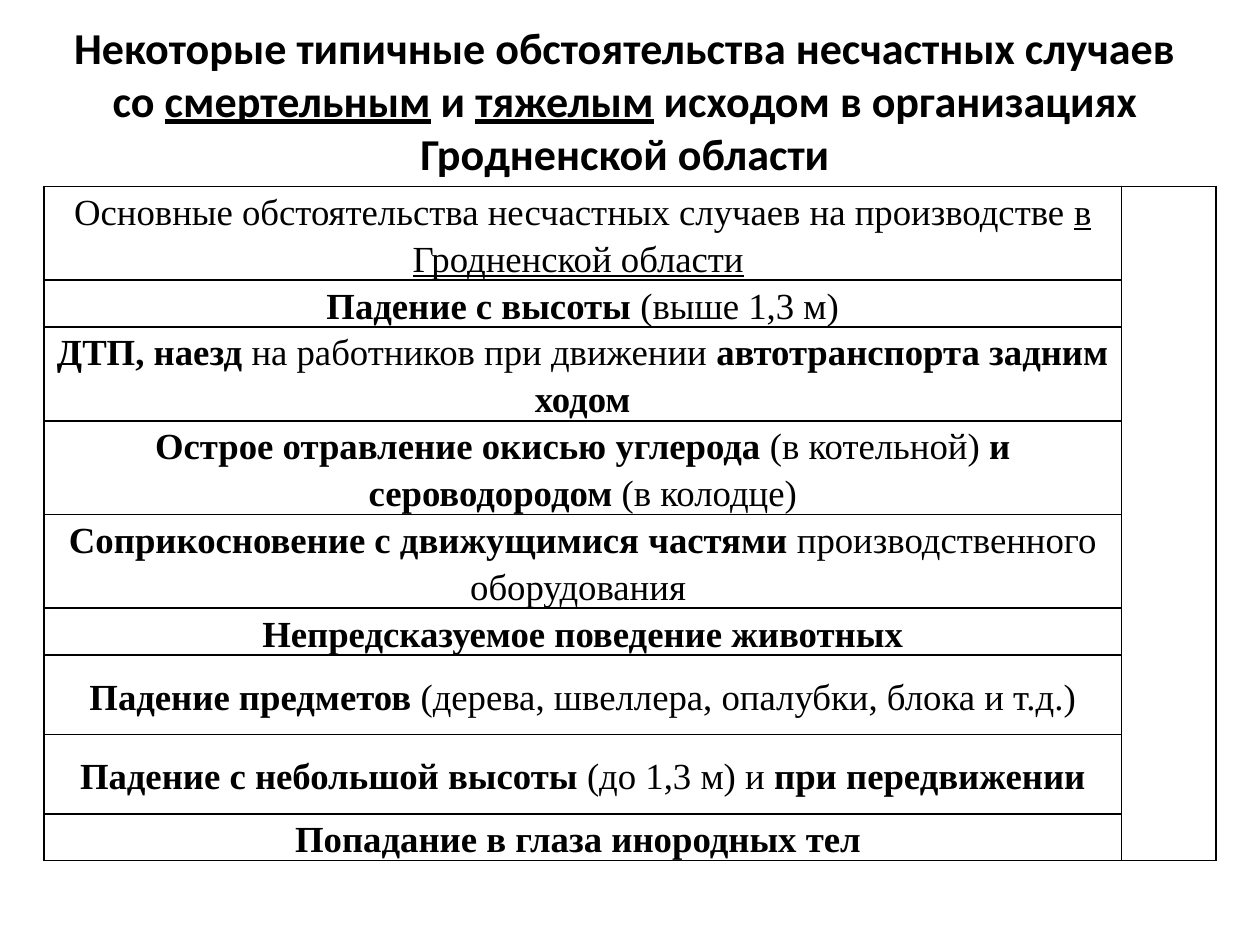
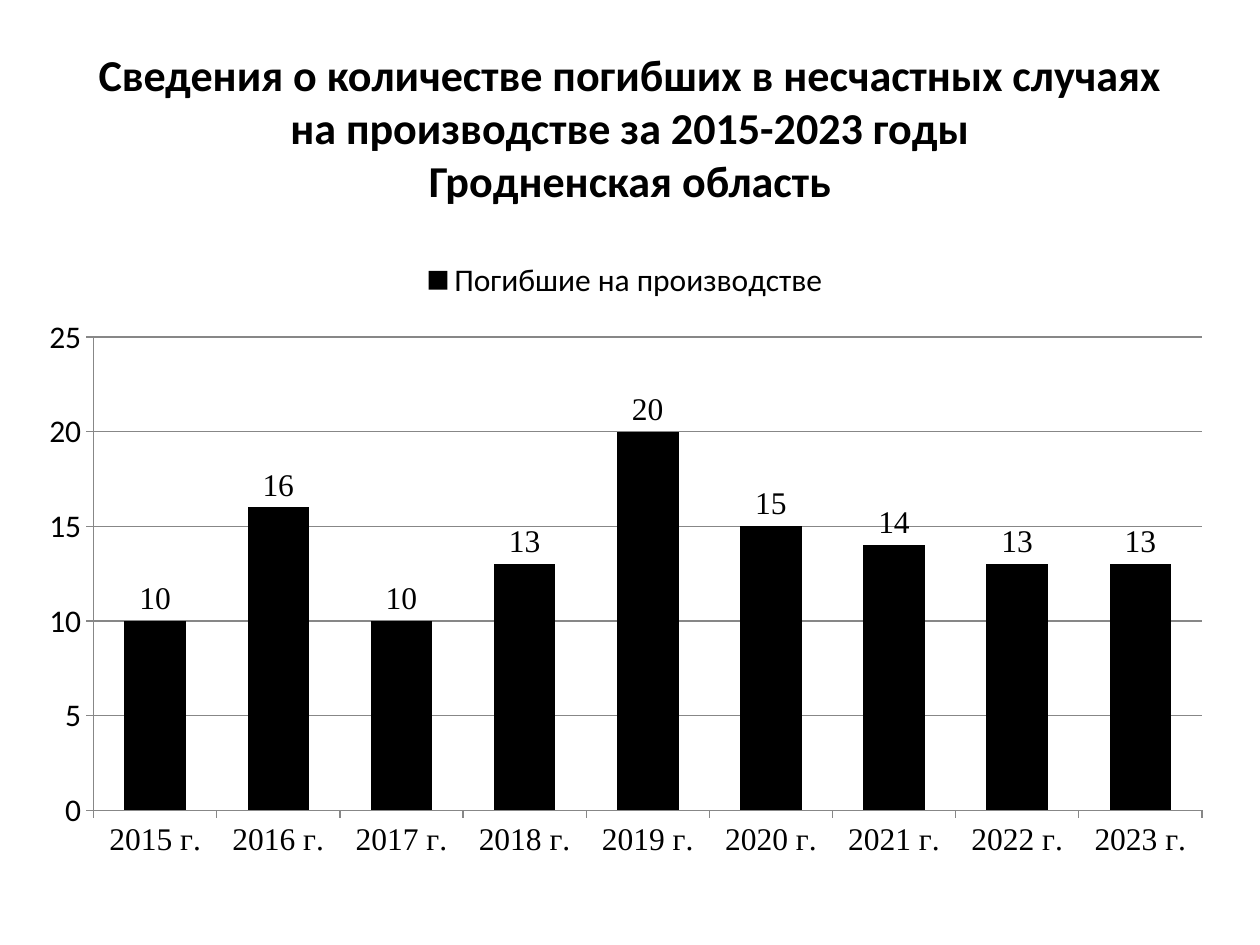
import pptx
import pptx.chart.data
import pptx.dml.color
import pptx.enum.chart
import pptx.enum.text
import pptx.oxml
import pptx.oxml.ns
import pptx.util
from dataclasses import dataclass

Inches, Pt = pptx.util.Inches, pptx.util.Pt
RGB = pptx.dml.color.RGBColor.from_string


@dataclass(frozen=True)
class Theme:
    ink: str = "000000"
    grid: str = "878787"
    paper: str = "FFFFFF"
    sans: str = "Calibri"
    serif: str = "Times New Roman"
    title_size: float = 25.2
    table_size: float = 21
    chart_size: float = 18
    border: float = 1


THEME = Theme()

CAUSES = {
    "title": "Некоторые типичные обстоятельства несчастных случаев со *смертельным* и "
             "*тяжелым* исходом в организациях Гродненской области",
    "title_at": (0.31, 0.31, 9.3, 1.33),
    "table_at": (0.35, 1.48, 9.3, 5.69),
    "columns": (8.55, 0.75),
    "header": "Основные обстоятельства несчастных случаев на производстве *в Гродненской области* ",
    "header_height": 0.69,
    "rows": [
        ("*Падение с высоты* (выше 1,3 м)", 0.32),
        ("*ДТП, наезд *на работников при движении* автотранспорта задним ходом*", 0.63),
        ("*Острое отравление окисью углерода *(в котельной)* и сероводородом *(в колодце)", 0.63),
        ("*Соприкосновение с движущимися частями* производственного оборудования ", 0.63),
        ("*Непредсказуемое поведение животных*", 0.32),
        ("*Падение предметов *(дерева, швеллера, опалубки, блока и т.д.)", 0.63),
        ("*Падение с небольшой высоты* (до 1,3 м) и *при передвижении*", 0.63),
        ("*Попадание в глаза инородных тел *", 0.32),
    ],
}

DEATHS = {
    "title": "Сведения о количестве погибших в несчастных случаях на производстве "
             "за 2015-2023 годы\nГродненская область",
    "title_at": (0.5, 0.3, 9, 1.42),
    "chart_at": (0.2, 1.95, 9.53, 4.95),
    "series": "Погибшие на производстве",
    "first_year": 2015,
    "values": (10, 16, 10, 13, 20, 15, 14, 13, 13),
}


def style_font(font, face, size):
    font.name, font.size = face, Pt(size)
    font.color.rgb = RGB(THEME.ink)


def write(tf, text, face, size, bold=False, emphasis="bold", spacing=None, before=None):
    p = tf.paragraphs[0]
    p.alignment = pptx.enum.text.PP_ALIGN.CENTER
    if spacing:
        p.line_spacing = spacing
    if before:
        p.space_before = Pt(before)
    for i, part in enumerate(text.split("*")):
        for j, line in enumerate(part.split("\n")):
            if j:
                p.add_line_break()
            if line:
                r = p.add_run()
                r.text = line
                style_font(r.font, face, size)
                r.font.bold = bold
                if i % 2:
                    setattr(r.font, emphasis, True)


def add_titled_slide(prs, content, bottom_inset=0.05):
    slide = prs.slides.add_slide(prs.slide_layouts[5])
    slide.background.fill.solid()
    slide.background.fill.fore_color.rgb = RGB(THEME.paper)
    sp = slide.shapes.title
    sp.left, sp.top, sp.width, sp.height = map(Inches, content["title_at"])
    tf = sp.text_frame
    tf.word_wrap = True
    tf.auto_size = pptx.enum.text.MSO_AUTO_SIZE.NONE
    tf.vertical_anchor = pptx.enum.text.MSO_ANCHOR.MIDDLE
    tf.margin_bottom = Inches(bottom_inset)
    write(tf, content["title"], THEME.sans, THEME.title_size, bold=True, emphasis="underline")
    return slide


def format_cell(cell):
    cell.margin_left = cell.margin_right = Inches(0.07)
    cell.margin_top = cell.margin_bottom = 0
    tcPr = cell._tc.get_or_add_tcPr()
    for side in ("lnL", "lnR", "lnT", "lnB"):
        tcPr.append(pptx.oxml.parse_xml(
            f'<a:{side} {pptx.oxml.ns.nsdecls("a")} w="{Pt(THEME.border)}"><a:solidFill>'
            f'<a:srgbClr val="{THEME.ink}"/></a:solidFill></a:{side}>'))
    cell.fill.background()


def add_causes_table(slide, content):
    rows = [(content["header"], content["header_height"])] + content["rows"]
    frame = slide.shapes.add_table(len(rows), len(content["columns"]),
                                   *map(Inches, content["table_at"]))
    table = frame.table
    table.first_row = table.horz_banding = False
    for column, width in zip(table.columns, content["columns"]):
        column.width = Inches(width)
    for cell in table.iter_cells():
        format_cell(cell)
    for i, (text, height) in enumerate(rows):
        table.rows[i].height = Inches(height)
        cell = table.cell(i, 0)
        if i:
            cell.vertical_anchor = pptx.enum.text.MSO_ANCHOR.MIDDLE
        write(cell.text_frame, text, THEME.serif, THEME.table_size, spacing=1.15,
              emphasis="bold" if i else "underline", before=3 if i else None)
    table.cell(0, 1).merge(table.cell(len(rows) - 1, 1))


def add_deaths_chart(slide, content):
    data = pptx.chart.data.CategoryChartData()
    data.categories = [f"{content['first_year'] + i} г." for i in range(len(content["values"]))]
    data.add_series(content["series"], content["values"])
    chart = slide.shapes.add_chart(pptx.enum.chart.XL_CHART_TYPE.COLUMN_CLUSTERED,
                                   *map(Inches, content["chart_at"]), data).chart
    style_font(chart.font, THEME.sans, THEME.chart_size)
    chart.has_title = False
    chart.has_legend = True
    chart.legend.position = pptx.enum.chart.XL_LEGEND_POSITION.TOP
    chart.legend.include_in_layout = False

    years, deaths = chart.category_axis, chart.value_axis
    style_font(years.tick_labels.font, THEME.serif, THEME.chart_size)
    deaths.minimum_scale, deaths.maximum_scale, deaths.major_unit = 0, 25, 5
    deaths.has_major_gridlines = True
    for axis in (years, deaths):
        axis.major_tick_mark = pptx.enum.chart.XL_TICK_MARK.OUTSIDE
    for line in (years.format.line, deaths.format.line, deaths.major_gridlines.format.line):
        line.color.rgb = RGB(THEME.grid)
        line.width = Pt(0.75)

    plot = chart.plots[0]
    plot.gap_width = 100
    plot.vary_by_categories = False
    fill = plot.series[0].format.fill
    fill.solid()
    fill.fore_color.rgb = RGB(THEME.ink)
    plot.has_data_labels = True
    labels = plot.data_labels
    labels.show_value = True
    labels.position = pptx.enum.chart.XL_LABEL_POSITION.OUTSIDE_END
    style_font(labels.font, THEME.serif, THEME.chart_size)


def main():
    prs = pptx.Presentation()
    prs.slide_width, prs.slide_height = Inches(10), Inches(7.5)
    add_causes_table(add_titled_slide(prs, CAUSES, bottom_inset=0.42), CAUSES)
    add_deaths_chart(add_titled_slide(prs, DEATHS), DEATHS)
    prs.save("out.pptx")


if __name__ == "__main__":
    main()
